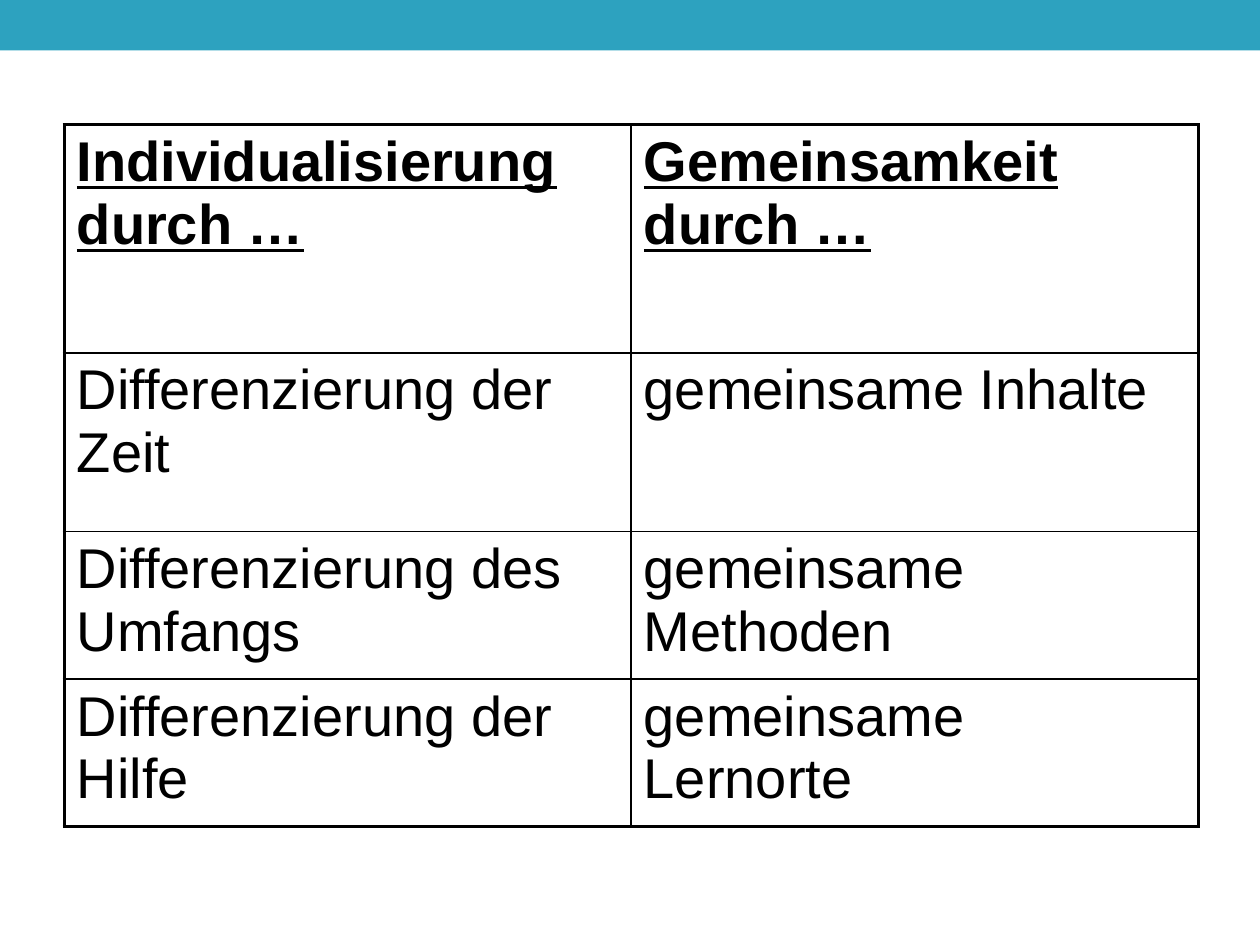
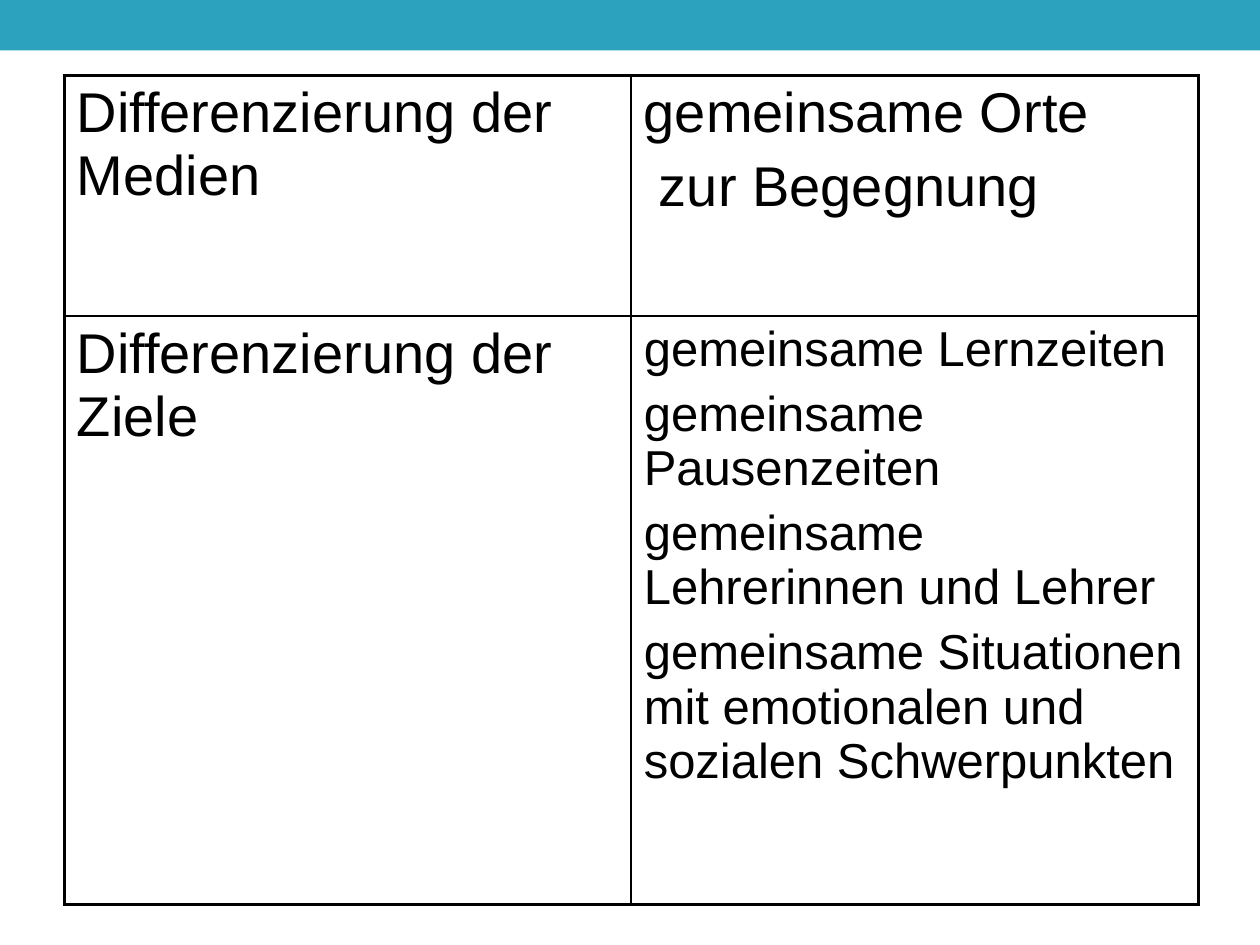
"""Two slides of a table on individualisation and shared learning."""
from dataclasses import dataclass

from lxml.etree import SubElement
from pptx import Presentation
from pptx.dml.color import RGBColor as RGB
from pptx.enum.shapes import MSO_SHAPE as SHAPE
from pptx.oxml.ns import qn
from pptx.util import Inches, Pt

SLIDES = [
    {
        "top": 0.99,
        "heights": [1.81, 1.42, 1.17, 1.17],
        "header": True,
        "rows": [
            (["Individualisierung durch …"], ["Gemeinsamkeit durch …"]),
            (["Differenzierung der Zeit"], ["gemeinsame Inhalte"]),
            (["Differenzierung des Umfangs"], ["gemeinsame Methoden"]),
            (["Differenzierung der Hilfe"], ["gemeinsame Lernorte"]),
        ],
    },
    {
        "top": 0.6,
        "heights": [1.91, 4.67],
        "header": False,
        "rows": [
            (["Differenzierung der Medien"], ["gemeinsame Orte", "zur Begegnung"]),
            (
                ["Differenzierung der Ziele"],
                [
                    "gemeinsame Lernzeiten",
                    "gemeinsame Pausenzeiten",
                    "gemeinsame Lehrerinnen und Lehrer",
                    "gemeinsame Situationen mit emotionalen und sozialen Schwerpunkten",
                ],
            ),
        ],
    },
]
INDENTS = {"zur Begegnung": 0.12}


@dataclass(frozen=True)
class Theme:
    font: str = "Arial"
    band: str = "2DA2BF"
    ink: str = "000000"
    size: int = 32
    list_size: int = 28
    space: float = 0.2
    outer: float = 2.25
    inner: float = 1


THEME = Theme()
WIDTH, HEIGHT, BAND_HEIGHT = 10, 7.5, 0.4
LEFT, COL_WIDTH = 0.51, 4.5


def add_band(s):
    sp = s.shapes.add_shape(SHAPE.RECTANGLE, 0, 0, Inches(WIDTH), Inches(BAND_HEIGHT))
    sp.shadow.inherit = False
    sp.fill.solid()
    sp.fill.fore_color.rgb = RGB.from_string(THEME.band)
    sp.line.fill.background()


def set_borders(cell, outside):
    tc_pr = cell._tc.get_or_add_tcPr()
    for side, is_outer in zip("LRTB", outside):
        width = Pt(THEME.outer if is_outer else THEME.inner)
        ln = SubElement(tc_pr, qn(f"a:ln{side}"), w=str(width))
        fill = SubElement(ln, qn("a:solidFill"))
        SubElement(fill, qn("a:srgbClr"), val=THEME.ink)


def write_cell(cell, lines, header):
    size = THEME.list_size if len(lines) > 2 else THEME.size
    tf = cell.text_frame
    tf.word_wrap = True
    for i, line in enumerate(lines):
        p = tf.add_paragraph() if i else tf.paragraphs[0]
        p.text = line
        if i:
            p.space_before = Pt(size * THEME.space)
        if line in INDENTS:
            p._p.get_or_add_pPr().set("marL", str(Inches(INDENTS[line])))
        p.font.name = THEME.font
        p.font.size = Pt(size)
        p.font.color.rgb = RGB.from_string(THEME.ink)
        p.font.bold = p.font.underline = header


def add_grid(s, top, heights, header, rows):
    n_rows, n_cols = len(rows), len(rows[0])
    table = s.shapes.add_table(
        n_rows, n_cols, Inches(LEFT), Inches(top),
        Inches(COL_WIDTH * n_cols), Inches(sum(heights)),
    ).table
    table.first_row = table.horz_banding = False
    for col in table.columns:
        col.width = Inches(COL_WIDTH)
    for r, (height, row) in enumerate(zip(heights, rows)):
        table.rows[r].height = Inches(height)
        for c, lines in enumerate(row):
            cell = table.cell(r, c)
            set_borders(cell, (c == 0, c == n_cols - 1, r == 0, r == n_rows - 1))
            cell.fill.background()
            write_cell(cell, lines, header and r == 0)


def main():
    prs = Presentation()
    prs.slide_width, prs.slide_height = Inches(WIDTH), Inches(HEIGHT)
    for content in SLIDES:
        s = prs.slides.add_slide(prs.slide_layouts[6])
        add_band(s)
        add_grid(s, **content)
    prs.save("out.pptx")


if __name__ == "__main__":
    main()
